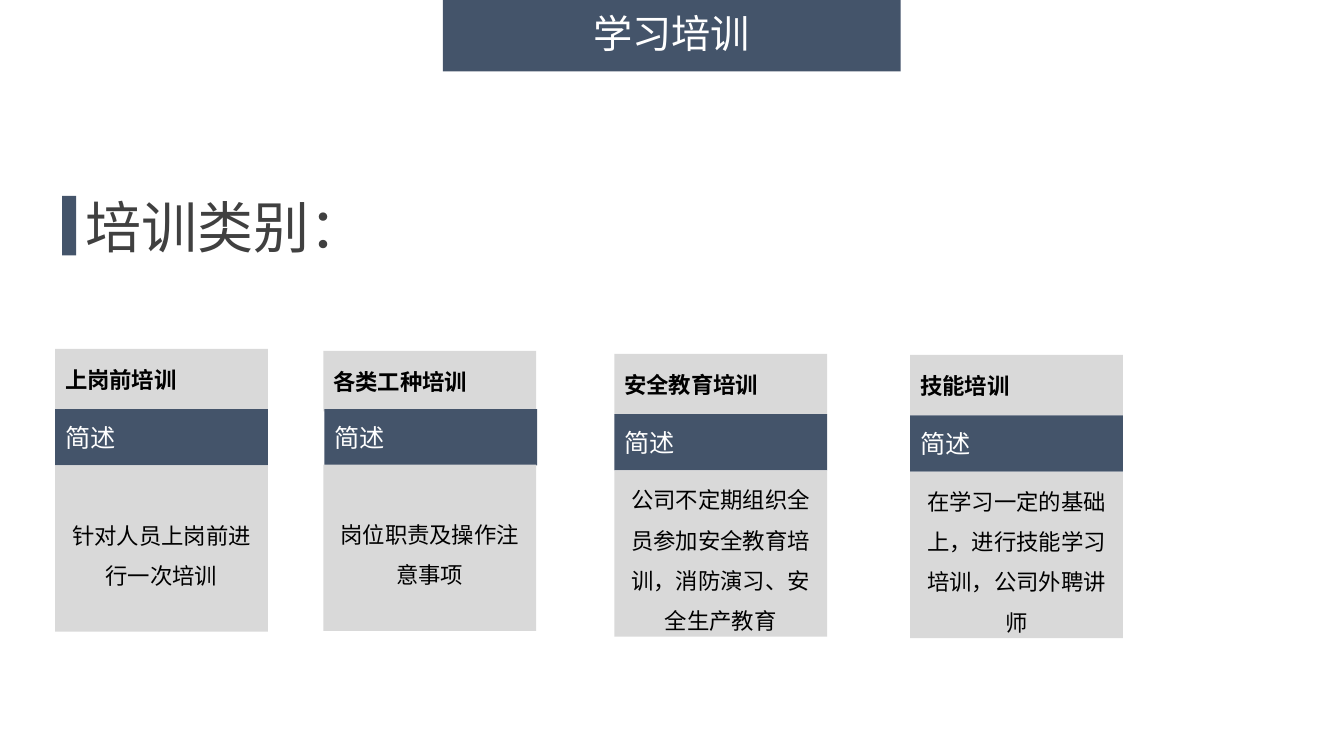
"""Build the slide on training categories with four description cards."""
from lxml.etree import SubElement
from pptx import Presentation
from pptx.dml.color import RGBColor
from pptx.enum.shapes import MSO_SHAPE as Shape
from pptx.enum.text import MSO_ANCHOR as Anchor, MSO_AUTO_SIZE as AutoSize, PP_ALIGN as Align
from pptx.oxml.ns import qn
from pptx.util import Pt

NAVY = RGBColor(0x44, 0x54, 0x6A)
GREY = RGBColor(0xD9, 0xD9, 0xD9)
DARK = RGBColor(0x40, 0x40, 0x40)
BLACK = RGBColor(0, 0, 0)
WHITE = RGBColor(255, 255, 255)
FONT = "Noto Sans CJK SC"


def add_bar(shapes, left, top, width, height, color):
    shape = shapes.add_shape(Shape.RECTANGLE, Pt(left), Pt(top), Pt(width), Pt(height))
    shape.shadow.inherit = False
    shape.fill.solid()
    shape.fill.fore_color.rgb = color
    shape.line.fill.background()
    return shape


def write(shape, text, size, color, bold=False, anchor=Anchor.MIDDLE, **paragraph_format):
    frame = shape.text_frame
    frame.text = text
    frame.vertical_anchor = anchor
    paragraph = frame.paragraphs[0]
    for name, value in paragraph_format.items():
        setattr(paragraph, name, value)
    font = paragraph.runs[0].font
    for name, value in {"name": FONT, "size": Pt(size), "bold": bold}.items():
        setattr(font, name, value)
    font.color.rgb = color
    SubElement(font._element, qn("a:ea"), typeface=FONT)


presentation = Presentation()
presentation.slide_width, presentation.slide_height = Pt(960), Pt(540)
slide = presentation.slides.add_slide(presentation.slide_layouts[5])

title = slide.shapes.title
title_box = {"left": 356.4, "top": 6.5, "width": 247, "height": 38.2}
for name, value in title_box.items():
    setattr(title, name, Pt(value))
write(title, "学习培训", 28, WHITE, alignment=Align.CENTER, line_spacing=0.9)
title.text_frame.word_wrap = False
title.text_frame.auto_size = AutoSize.NONE
title_bar = add_bar(slide.shapes, 316.4, 0, 327, 51, NAVY)
title._element.addprevious(title_bar._element)

CARD_WIDTH = 152
cards = [
    ("上岗前培训", "针对人员上岗前进行一次培训", 39.4, 39.4, 249.2, 292.2, 332.4),
    ("各类工种培训", "岗位职责及操作注意事项", 231, 231.8, 250.6, 292.2, 331.8),
    ("安全教育培训", "公司不定期组织全员参加安全教育培训，消防演习、安全生产教育",
     438.8, 438.8, 252.8, 295.8, 336),
    ("技能培训", "在学习一定的基础上，进行技能学习培训，公司外聘讲师",
     650.2, 650.2, 253.6, 296.8, 337),
]
for heading, summary, left, band_left, heading_top, band_top, summary_top in cards:
    group = slide.shapes.add_group_shape()
    heading_bar = add_bar(group.shapes, left, heading_top, CARD_WIDTH, 43.2, GREY)
    write(heading_bar, heading, 16, BLACK, bold=True, alignment=Align.LEFT)
    band = add_bar(group.shapes, band_left, band_top, CARD_WIDTH, 40.2, NAVY)
    write(band, "简述", 18, WHITE, alignment=Align.LEFT)
    summary_box = add_bar(group.shapes, left, summary_top, CARD_WIDTH, 118.8, GREY)
    write(summary_box, summary, 16, BLACK, alignment=Align.CENTER, line_spacing=1.5)

add_bar(slide.shapes, 44.4, 140, 10, 42.4, NAVY)
category = slide.shapes.add_textbox(Pt(54), Pt(134), Pt(592), Pt(55.4))
category.text_frame.word_wrap = True
category.text_frame.auto_size = AutoSize.SHAPE_TO_FIT_TEXT
write(category, "培训类别：", 40, DARK, anchor=Anchor.TOP)

presentation.save("out.pptx")
